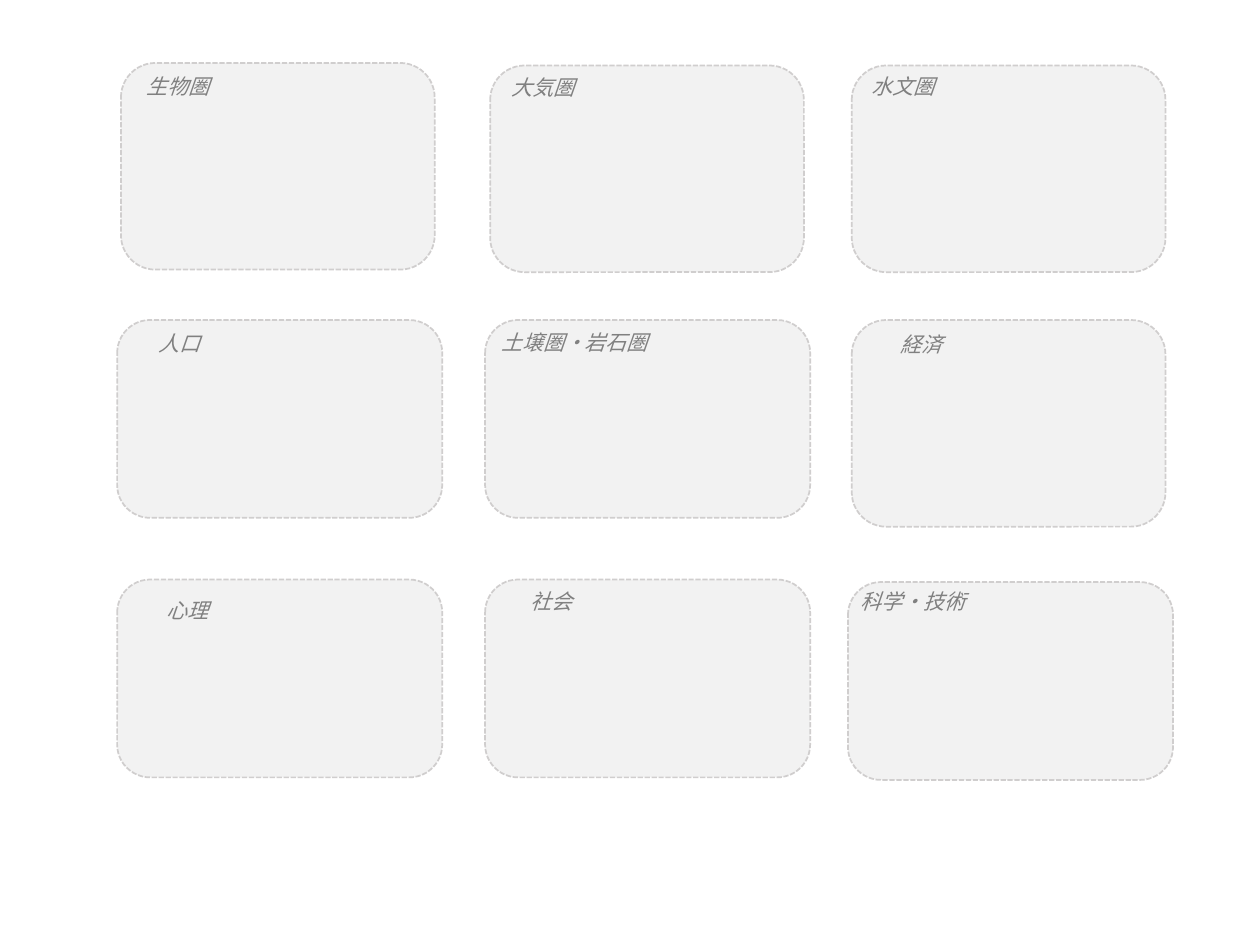
import pptx
import pptx.util
import pptx.dml.color
import pptx.enum.dml
import pptx.enum.shapes
import pptx.enum.text

Inches = pptx.util.Inches

THEME = {
    "font": "Calibri", "size": 12, "ink": "808080",
    "fill": "F2F2F2", "edge": "D0CECE", "width": 1,
}
WIDE, TALL = (2.58, 1.57), (2.49, 1.64)

# label, card corner, card size, label box (left, top, width, height)
CARDS = [
    ("生物圏", (0.96, 0.5), TALL, (0.63, 0.43, 1.56, 0.51)),
    ("大気圏", (3.89, 0.52), TALL, (3.6, 0.44, 1.42, 0.51)),
    ("水文圏", (6.76, 0.52), TALL, (6.38, 0.43, 1.57, 0.51)),
    ("人口", (0.93, 2.54), WIDE, (0.69, 2.4, 1.47, 0.64)),
    ("土壌圏・岩石圏", (3.85, 2.54), WIDE, (3.62, 2.46, 1.88, 0.51)),
    ("経済", (6.76, 2.54), TALL, (6.52, 2.41, 1.59, 0.64)),
    ("心理", (0.93, 4.6), WIDE, (0.55, 4.52, 1.88, 0.64)),
    ("社会", (3.85, 4.6), WIDE, (3.49, 4.45, 1.78, 0.64)),
    ("科学・技術", (6.73, 4.62), WIDE, (6.36, 4.45, 1.78, 0.64)),
]


def color(name):
    return pptx.dml.color.RGBColor.from_string(THEME[name])


def add_box(slide, box):
    """Add a rounded box with no fill, line or shadow."""
    kind = pptx.enum.shapes.MSO_SHAPE.ROUNDED_RECTANGLE
    shape = slide.shapes.add_shape(kind, *map(Inches, box))
    shape.shadow.inherit = False
    shape.fill.background()
    shape.line.fill.background()
    return shape


def add_card(slide, box):
    card = add_box(slide, box)
    card.fill.solid()
    card.fill.fore_color.rgb = color("fill")
    card.line.color.rgb = color("edge")
    card.line.width = pptx.util.Pt(THEME["width"])
    # python-pptx's SQUARE_DOT is the sysDot preset, and sysDash is ROUND_DOT's neighbour
    card.line.dash_style = pptx.enum.dml.MSO_LINE.SQUARE_DOT
    card.line._ln.prstDash.set("val", "sysDash")


def set_text(shape, text, size=THEME["size"], ink="ink", italic=False):
    frame = shape.text_frame
    frame.word_wrap = True
    frame.vertical_anchor = pptx.enum.text.MSO_ANCHOR.MIDDLE
    para = frame.paragraphs[0]
    para.alignment = pptx.enum.text.PP_ALIGN.CENTER
    run = para.add_run()
    run.text = text
    run.font.name = THEME["font"]
    run.font.size = pptx.util.Pt(size)
    run.font.italic = italic
    run.font.color.rgb = color(ink)


def main():
    deck = pptx.Presentation()
    deck.slide_width, deck.slide_height = Inches(10), Inches(7.5)
    slide = deck.slides.add_slide(deck.slide_layouts[6])
    for label, corner, size, box in CARDS:
        add_card(slide, corner + size)
        set_text(add_box(slide, box), label, italic=True)
    deck.save("out.pptx")


if __name__ == "__main__":
    main()
